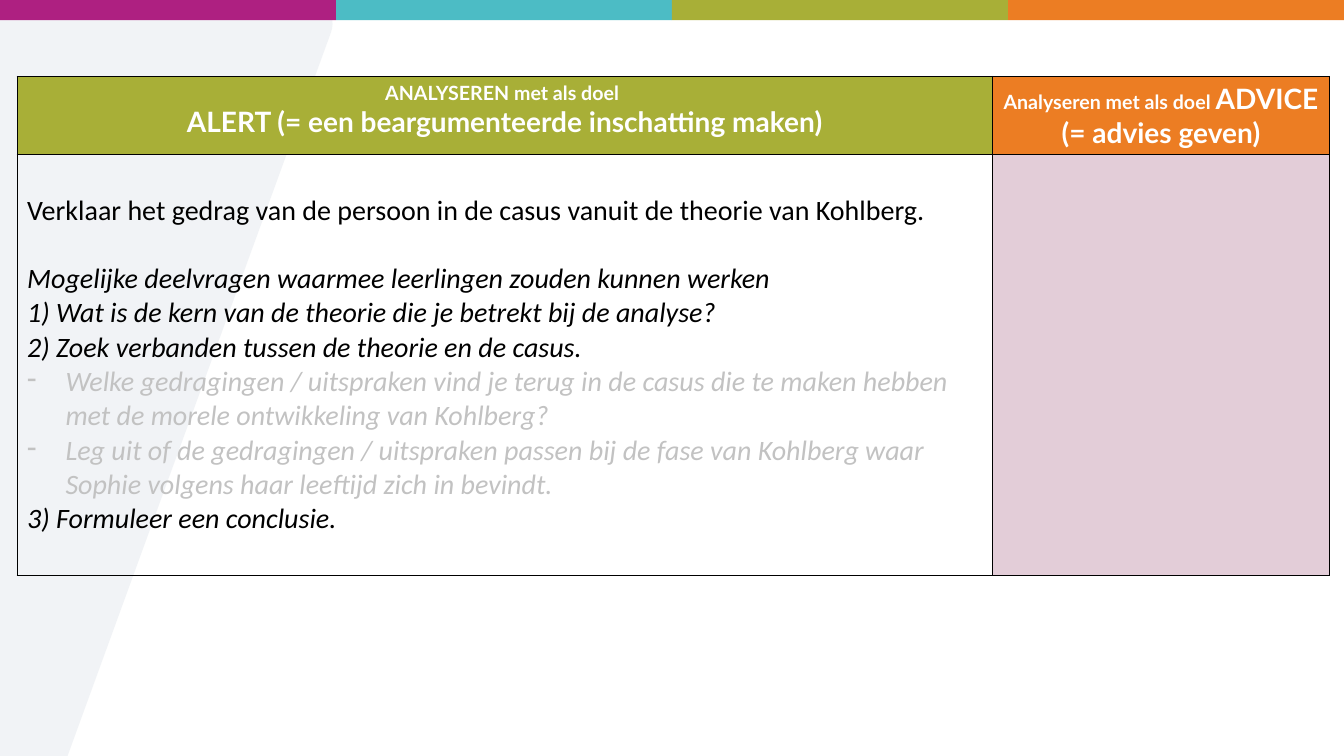
from copy import deepcopy
from lxml import etree
from pptx import Presentation
from pptx.dml.color import RGBColor
from pptx.enum.shapes import MSO_SHAPE
from pptx.enum.text import PP_ALIGN
from pptx.oxml.ns import qn
from pptx.util import Inches, Pt

RECTANGLE = MSO_SHAPE.RECTANGLE
CENTER = PP_ALIGN.CENTER
GREEN, ORANGE = "A8AF37", "EC7D23"
BLACK, GREY = "000000", "C2C2C2"
BLANK_LINE = Pt(24.4)


def paint(target, colour):
    target.solid()
    target.fore_color.rgb = RGBColor.from_string(colour)


def add_run(paragraph, text, colour, **formats):
    run = paragraph.add_run()
    run.text = text
    for name, value in formats.items():
        setattr(run.font, name, value)
    paint(run.font.fill, colour)
    return run


prs = Presentation()
prs.slide_width, prs.slide_height = Inches(13.33), Inches(7.5)
slide = prs.slides.add_slide(prs.slide_layouts[6])

# Pale slanted panel with a rounded top right corner
corner = [(3.28, 0.33), (3.34, 0.17), (3.25, 0.05), (3.09, 0.05)]
outline = []
for step in range(1, 11):
    t = step / 10
    weights = [(1 - t) ** 3, 3 * t * (1 - t) ** 2, 3 * t * t * (1 - t), t ** 3]
    outline.append(tuple(Inches(sum(w * point[axis] for w, point in zip(weights, corner)))
                         for axis in (0, 1)))
outline += [(Inches(x), Inches(y)) for x, y in [(0, 0.05), (-0.01, 7.5), (0.67, 7.5)]]
builder = slide.shapes.build_freeform(Inches(3.28), Inches(0.33), scale=1.0)
builder.add_line_segments(outline, close=True)
panel = builder.convert_to_shape()
panel.shadow.inherit = False
panel.line.fill.background()
paint(panel.fill, "E8ECF0")
panel_colour = panel.fill._xPr.find(".//" + qn("a:srgbClr"))
etree.SubElement(panel_colour, qn("a:alpha"), val="59000")

# Colour band along the top
band_width = prs.slide_width / 4
for i, colour in enumerate(["AE2081", "4CBCC5", GREEN, ORANGE]):
    band = slide.shapes.add_shape(RECTANGLE, int(i * band_width), 0, int(band_width), Inches(0.2))
    band.shadow.inherit = False
    band.line.fill.background()
    paint(band.fill, colour)

# Table with black borders
table = slide.shapes.add_table(2, 2, Inches(0.17), Inches(0.76), Inches(13.02), Inches(4.95)).table
table.horz_banding = False
for column, width in zip(table.columns, [9.67, 3.35]):
    column.width = Inches(width)
for row, height in zip(table.rows, [0.77, 4.18]):
    row.height = Inches(height)
for cell, colour in zip(table.iter_cells(), [GREEN, ORANGE, None, "E3CDD8"]):
    properties = cell._tc.get_or_add_tcPr()
    for side in ("a:lnL", "a:lnR", "a:lnT", "a:lnB"):
        border = etree.SubElement(properties, qn(side), w="12700")
        border_fill = etree.SubElement(border, qn("a:solidFill"))
        etree.SubElement(border_fill, qn("a:srgbClr"), val=BLACK)
    if colour:
        paint(cell.fill, colour)
    else:
        cell.fill.background()

# Header cells
heading = {"name": "Lato", "bold": True}
alert = table.cell(0, 0).text_frame.paragraphs[0]
alert.alignment = CENTER
goal = add_run(alert, "ANALYSEREN met als doel ", "FFFFFF", size=Pt(14), **heading)
alert.add_line_break()
alert._p.find(qn("a:br")).append(deepcopy(goal._r.rPr))
add_run(alert, "ALERT (= een beargumenteerde inschatting maken)", "FFFFFF", size=Pt(20), **heading)

advice = table.cell(0, 1).text_frame.paragraphs[0]
advice.alignment = CENTER
add_run(advice, "Analyseren met als doel ", "FFFFFF", size=Pt(14), **heading)
add_run(advice, "ADVICE (= advies geven)", "FFFFFF", size=Pt(20), **heading)

# Assignment and sub-questions: text, italic, dash, space before
assignment = [
    ("Verklaar het gedrag van de persoon in de casus vanuit de theorie van Kohlberg.", False, False, 0),
    ("Mogelijke deelvragen waarmee leerlingen zouden kunnen werken", True, False, BLANK_LINE),
    ("1) Wat is de kern van de theorie die je betrekt bij de analyse?", True, False, 0),
    ("2) Zoek verbanden tussen de theorie en de casus.", True, False, 0),
    ("Welke gedragingen / uitspraken vind je terug in de casus die te maken hebben "
     "met de morele ontwikkeling van Kohlberg?", True, True, 0),
    ("Leg uit of de gedragingen / uitspraken passen bij de fase van Kohlberg waar "
     "Sophie volgens haar leeftijd zich in bevindt.", True, True, 0),
    ("3) Formuleer een conclusie.", True, False, 0),
]
assignment_cell = table.cell(1, 0)
assignment_cell.margin_top = Inches(0.39)
frame = assignment_cell.text_frame
for i, (text, italic, dash, space) in enumerate(assignment):
    paragraph = frame.add_paragraph() if i else frame.paragraphs[0]
    if dash:
        indent = paragraph._p.get_or_add_pPr()
        indent.set("marL", str(Inches(0.38)))
        indent.set("indent", str(-Inches(0.38)))
        etree.SubElement(indent, qn("a:buChar"), char="-")
    if space:
        paragraph.space_before = space
    add_run(paragraph, text, GREY if dash else BLACK,
            name="Calibri", size=Pt(20), bold=False, italic=italic)

prs.save("out.pptx")
